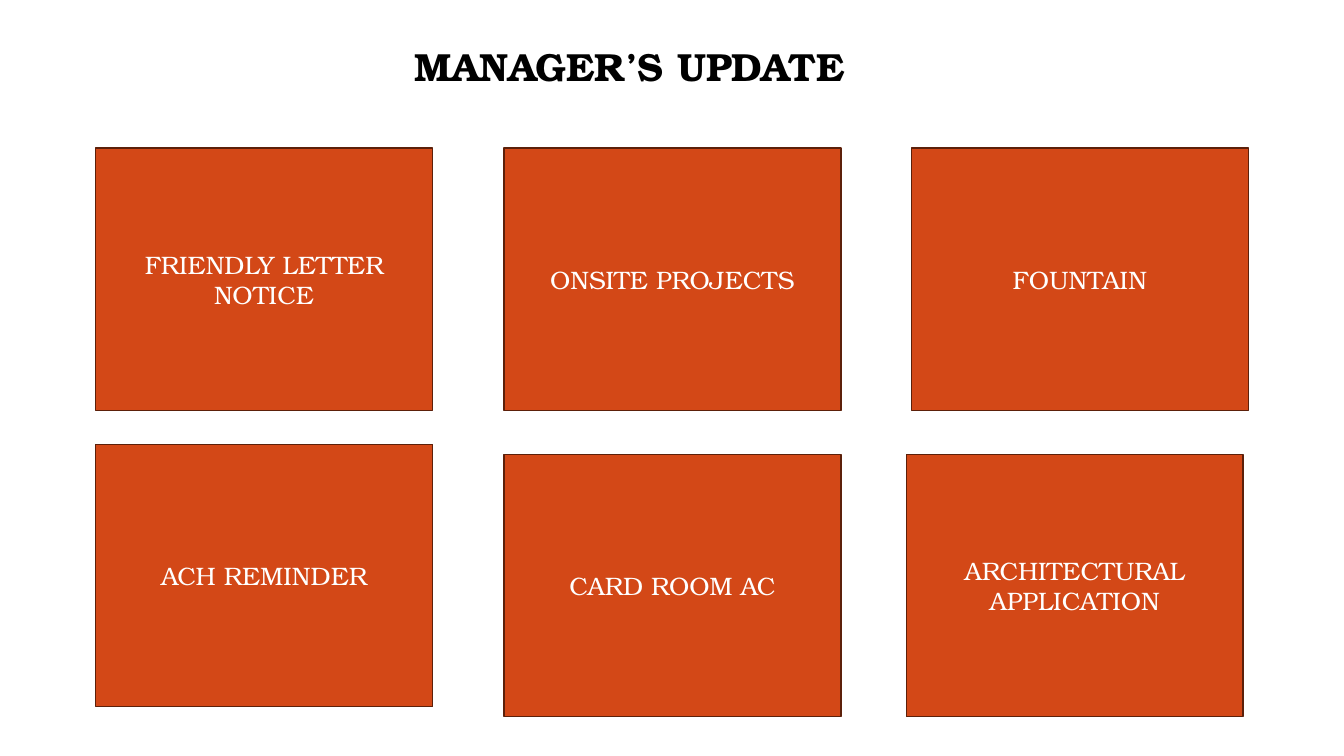
"""Build the manager's update slide with six topic cards."""
from pptx import Presentation
from pptx.dml.color import RGBColor
from pptx.enum.shapes import MSO_SHAPE
from pptx.enum.text import MSO_ANCHOR, PP_ALIGN
from pptx.util import Inches, Pt

BLACK = RGBColor(0x00, 0x00, 0x00)
WHITE = RGBColor(0xFF, 0xFF, 0xFF)
ORANGE = RGBColor(0xD3, 0x48, 0x17)
BROWN = RGBColor(0x5C, 0x20, 0x0A)
FONT = "TeX Gyre Bonum"


def write(shape, text, size=18, color=WHITE, bold=False,
          align=PP_ALIGN.CENTER, anchor=MSO_ANCHOR.MIDDLE):
    frame = shape.text_frame
    frame.word_wrap = True
    frame.vertical_anchor = anchor
    para = frame.paragraphs[0]
    para.alignment = align
    run = para.add_run()
    run.text = text
    run.font.name = FONT
    run.font.size = Pt(size)
    run.font.bold = bold
    run.font.color.rgb = color


deck = Presentation()
deck.slide_width = Inches(13.33)
deck.slide_height = Inches(7.5)
slide = deck.slides.add_slide(deck.slide_layouts[6])

title = slide.shapes.add_textbox(Inches(4.01), Inches(0.37), Inches(5.31), Inches(0.57))
write(title, "MANAGER’S UPDATE", size=28, color=BLACK, bold=True,
      align=PP_ALIGN.LEFT, anchor=MSO_ANCHOR.TOP)

cards = [
    ("FRIENDLY LETTER NOTICE", 0.95, 1.47),
    ("ONSITE PROJECTS", 5, 1.47),
    ("FOUNTAIN", 9.04, 1.47),
    ("ACH REMINDER", 0.95, 4.41),
    ("CARD ROOM AC", 5, 4.51),
    ("ARCHITECTURAL APPLICATION", 8.99, 4.51),
]
for label, left, top in cards:
    card = slide.shapes.add_shape(MSO_SHAPE.FLOWCHART_PROCESS, Inches(left),
                                  Inches(top), Inches(3.34), Inches(2.6))
    card.shadow.inherit = False
    card.fill.solid()
    card.fill.fore_color.rgb = ORANGE
    card.line.color.rgb = BROWN
    card.line.width = Pt(1)
    write(card, label)

deck.save("out.pptx")
